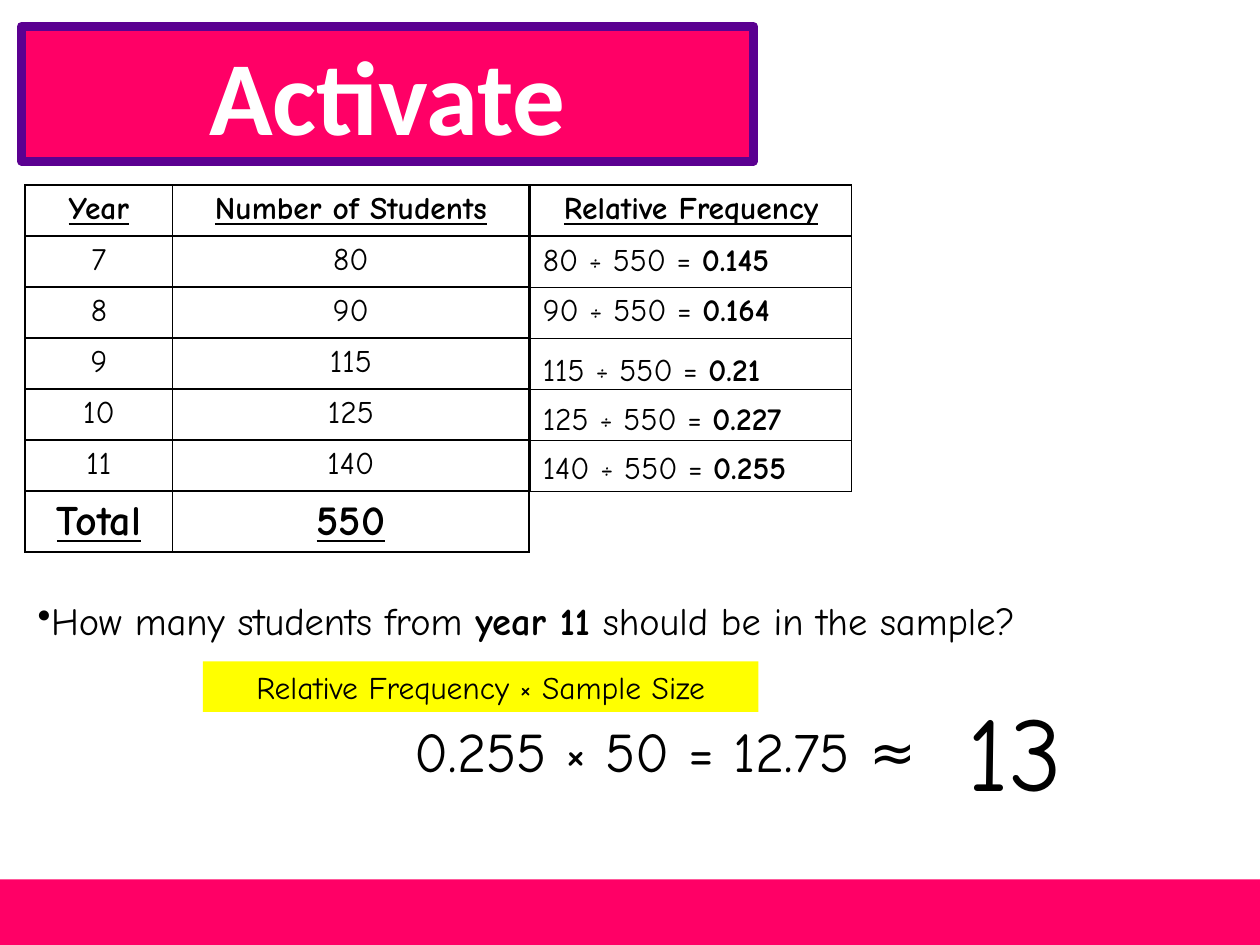
from pptx import Presentation
from pptx.dml.color import RGBColor as RGB
from pptx.enum.shapes import MSO_SHAPE as SHAPE
from pptx.enum.text import MSO_ANCHOR as ANCHOR, PP_ALIGN as ALIGN
from pptx.oxml import parse_xml
from pptx.oxml.ns import nsdecls
from pptx.util import Inches, Pt

THEME = {
    "pink": "FF0066", "purple": "5B0091", "yellow": "FFFF00",
    "white": "FFFFFF", "ink": "000000",
    "title_font": "Calibri", "font": "Comic Neue",
    "huge": 60, "sum": 32, "total": 24, "question": 22, "body": 18,
}

TITLE = "Activate"
STUDENTS = [("Year", "Number of Students"), ("7", "80"), ("8", "90"), ("9", "115"),
            ("10", "125"), ("11", "140"), ("Total", "550")]
FREQUENCY_HEADING = "Relative Frequency"
FREQUENCIES = [("80 ÷ 550 = ", "0.145"), ("90 ÷ 550 = ", "0.164"), ("115 ÷ 550 = ", "0.21"),
               ("125 ÷ 550 = ", "0.227"), ("140 ÷ 550 = ", "0.255")]
QUESTION = ("How many students from ", "year 11", " should be in the sample?")
RULE = "Relative Frequency × Sample Size"
WORKING = "0.255 × 50 = 12.75 ≈"
ANSWER = "13"

WIDTH, HEIGHT = 10, 7.5
LEFT, TABLE_TOP = 0.2, 1.47
STUDENT_COLUMNS, FREQUENCY_COLUMN = (1.17, 2.83), 2.55
FREQUENCY_LEFT = LEFT + sum(STUDENT_COLUMNS) + 0.01
ROW = 2.43 / 6
FOOTER = 0.52
FREQUENCY_TOPS = (1.86, 2.73)  # the last three lines sit lower than the first two
FREQUENCY_STEP = 0.39

deck = Presentation()
deck.slide_width, deck.slide_height = Inches(WIDTH), Inches(HEIGHT)
slide = deck.slides.add_slide(deck.slide_layouts[6])


def color(name):
    return RGB.from_string(THEME[name])


def style(run, size="body", bold=False, underline=False, ink="ink", font="font"):
    run.font.name, run.font.size = THEME[font], Pt(THEME[size])
    run.font.bold, run.font.underline = bold, underline
    run.font.color.rgb = color(ink)


def write(frame, parts, size="body", align=ALIGN.LEFT):
    """Set one paragraph from parts, every second part bold."""
    frame.word_wrap = True
    paragraph = frame.paragraphs[0]
    paragraph.alignment = align
    for index, part in enumerate(parts):
        run = paragraph.add_run()
        run.text = part
        style(run, size, bold=index % 2 == 1)
    return paragraph


def add_text(box, parts, size="body"):
    frame = slide.shapes.add_textbox(*map(Inches, box)).text_frame
    write(frame, parts, size)
    return frame


def add_block(kind, box, fill):
    block = slide.shapes.add_shape(kind, *map(Inches, box))
    block.shadow.inherit = False
    block.fill.solid()
    block.fill.fore_color.rgb = color(fill)
    block.line.fill.background()
    return block


def add_borders(cell):
    properties = cell._tc.get_or_add_tcPr()
    for place, side in enumerate(("lnL", "lnR", "lnT", "lnB")):
        properties.insert(place, parse_xml(
            f'<a:{side} {nsdecls("a")} w="{Pt(1)}"><a:solidFill>'
            f'<a:srgbClr val="{THEME["ink"]}"/></a:solidFill></a:{side}>'))


def add_grid(left, columns, rows, filled):
    frame = slide.shapes.add_table(len(rows), len(columns), Inches(left), Inches(TABLE_TOP),
                                   Inches(sum(columns)), Inches(ROW * len(rows)))
    table = frame.table
    table.first_row = table.horz_banding = False
    for column, width in zip(table.columns, columns):
        column.width = Inches(width)
    for r, values in enumerate(rows):
        table.rows[r].height = Inches(ROW)
        for c, value in enumerate(values):
            cell = table.cell(r, c)
            if filled:
                cell.fill.solid()
                cell.fill.fore_color.rgb = color("white")
            else:
                cell.fill.background()
            add_borders(cell)
            cell.text = value
            paragraph = cell.text_frame.paragraphs[0]
            paragraph.alignment = ALIGN.CENTER
            is_total = values[0] == "Total"
            strong = r == 0 or is_total
            for run in paragraph.runs:
                style(run, "total" if is_total else "body", strong, strong)


title = add_block(SHAPE.ROUNDED_RECTANGLE, (0.17, 0.21, 5.81, 1.07), "pink")
title.adjustments[0] = 0
title.line.color.rgb, title.line.width = color("purple"), Pt(5)
title.text_frame.text = TITLE
title.text_frame.vertical_anchor = ANCHOR.MIDDLE
heading = title.text_frame.paragraphs[0]
heading.alignment = ALIGN.CENTER
style(heading.runs[0], "huge", bold=True, ink="white", font="title_font")

add_block(SHAPE.RECTANGLE, (0, HEIGHT - FOOTER, WIDTH, FOOTER), "pink")

add_grid(LEFT, STUDENT_COLUMNS, STUDENTS, filled=True)
add_grid(FREQUENCY_LEFT, (FREQUENCY_COLUMN,),
         [(FREQUENCY_HEADING,)] + [("",)] * len(FREQUENCIES), filled=False)
for group_top, group in zip(FREQUENCY_TOPS, (FREQUENCIES[:2], FREQUENCIES[2:])):
    for index, parts in enumerate(group):
        add_text((FREQUENCY_LEFT, group_top + index * FREQUENCY_STEP, 2.44, 0.4), parts)

question = add_text((LEFT, 4.69, 9.13, 0.47), QUESTION, "question").paragraphs[0]
question._p.get_or_add_pPr().append(parse_xml(f'<a:buChar {nsdecls("a")} char="•"/>'))

rule = add_block(SHAPE.RECTANGLE, (1.61, 5.25, 4.41, 0.4), "yellow")
write(rule.text_frame, [RULE], align=ALIGN.CENTER)
add_text((3.19, 5.64, 4.65, 0.64), [WORKING], "sum")
answer = add_text((7.36, 5.4, 2.13, 1.11), [ANSWER], "huge")
answer.margin_left = Inches(0.32)

deck.save("out.pptx")
